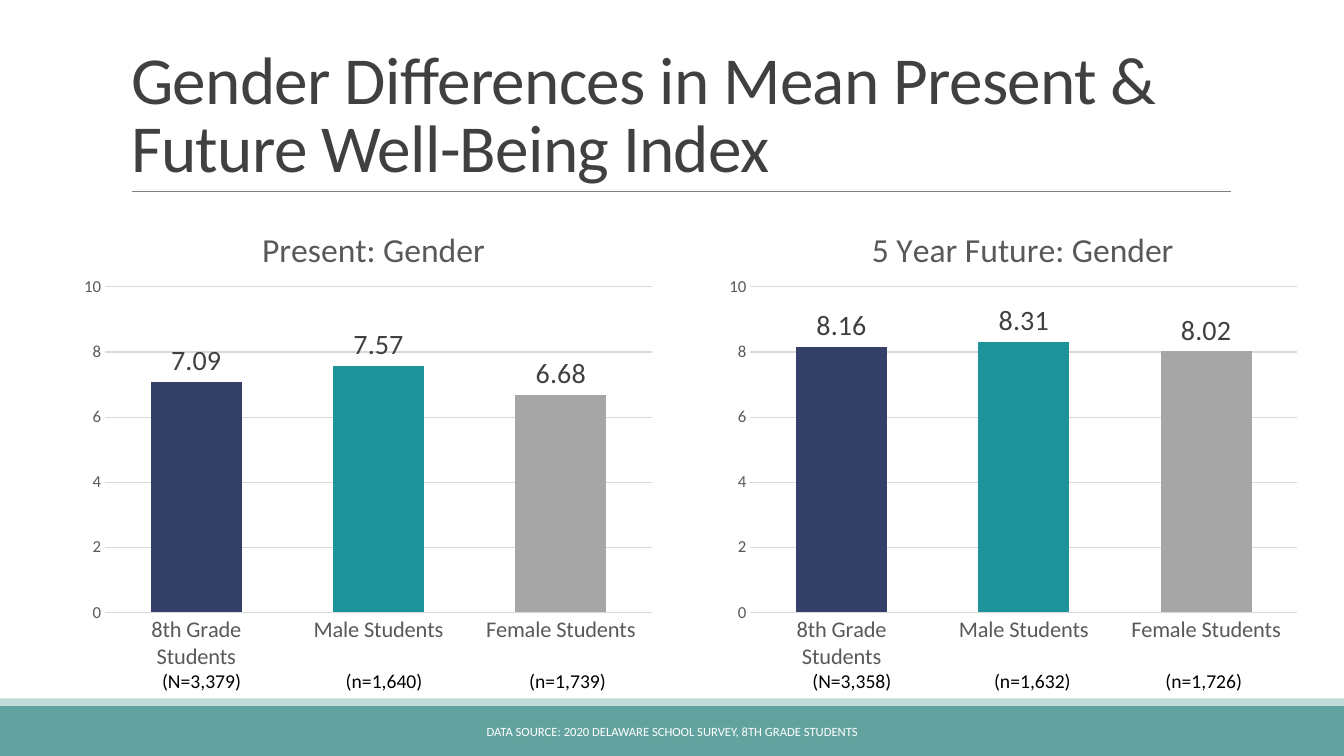
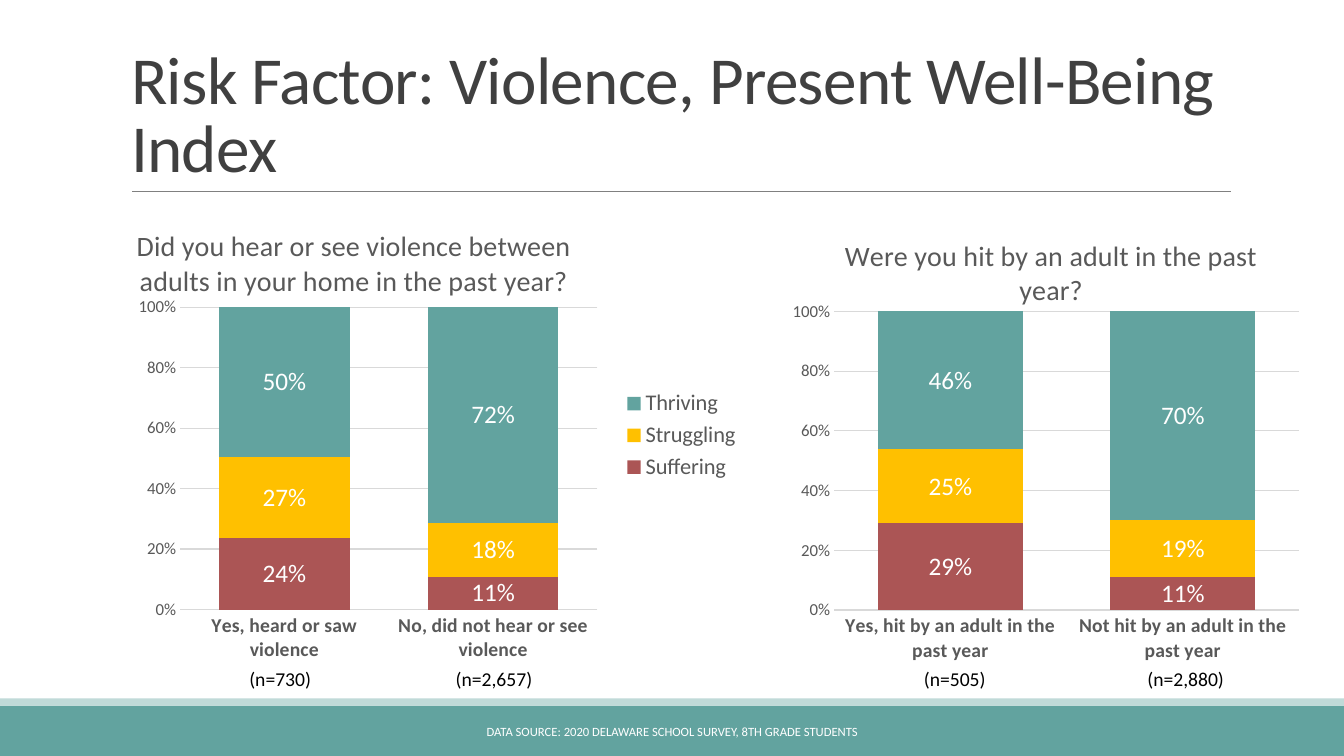
from dataclasses import dataclass
from lxml.etree import SubElement
from pptx import Presentation
from pptx.chart.data import CategoryChartData
from pptx.dml.color import RGBColor
from pptx.enum.chart import XL_CHART_TYPE, XL_LABEL_POSITION, XL_LEGEND_POSITION, XL_TICK_MARK
from pptx.enum.shapes import MSO_CONNECTOR, MSO_SHAPE
from pptx.enum.text import MSO_ANCHOR, MSO_AUTO_SIZE, PP_ALIGN
from pptx.oxml.ns import qn
from pptx.util import Inches, Pt


@dataclass(frozen=True)
class Theme:
    font: str = "Calibri"
    teal: str = "62A39F"
    pale_teal: str = "C0DAD8"
    navy: str = "344068"
    sea: str = "1E9399"
    silver: str = "A6A6A6"
    red: str = "AB5555"
    amber: str = "FFC000"
    heading: str = "404040"
    axis_text: str = "595959"
    rule: str = "808080"
    grid: str = "D9D9D9"
    white: str = "FFFFFF"
    black: str = "000000"
    title_size: int = 48
    count_size: int = 14
    tick_size: int = 12
    source_size: int = 9


THEME = Theme()
SOURCE = "DATA SOURCE: 2020 DELAWARE SCHOOL SURVEY, 8TH GRADE STUDENTS"
GROUPS = ["8th Grade Students", "Male Students", "Female Students"]
LEVELS = {"Suffering": THEME.red, "Struggling": THEME.amber, "Thriving": THEME.teal}


def rgb(colour):
    return RGBColor.from_string(colour)


def style_font(font, size, colour, bold=False):
    font.name, font.size, font.bold = THEME.font, Pt(size), bold
    font.color.rgb = rgb(colour)


def write_text(frame, text, *, size, colour, align=PP_ALIGN.CENTER,
               anchor=MSO_ANCHOR.TOP, line_spacing=None, tracking=None):
    frame.word_wrap = True
    frame.auto_size = MSO_AUTO_SIZE.NONE
    frame.vertical_anchor = anchor
    paragraph = frame.paragraphs[0]
    paragraph.alignment = align
    if line_spacing:
        paragraph.line_spacing = line_spacing
    run = paragraph.add_run()
    run.text = text
    style_font(run.font, size, colour)
    if tracking:
        run.font._element.set("spc", str(int(tracking * 100)))


def add_text(slide, box, text, **text_format):
    textbox = slide.shapes.add_textbox(*map(Inches, box))
    write_text(textbox.text_frame, text, **text_format)


def add_band(slide, box, colour):
    band = slide.shapes.add_shape(MSO_SHAPE.RECTANGLE, *map(Inches, box))
    band.shadow.inherit = False
    band.fill.solid()
    band.fill.fore_color.rgb = rgb(colour)
    band.line.fill.background()


def add_frame(deck, title):
    """Start a slide with its bands, title, rule and source line."""
    slide = deck.slides.add_slide(deck.slide_layouts[5])
    add_band(slide, (0, 7, 13.33, 0.5), THEME.teal)
    add_band(slide, (0, 6.93, 13.33, 0.07), THEME.pale_teal)

    # Rule under the title
    rule = slide.shapes.add_connector(
        MSO_CONNECTOR.STRAIGHT, Inches(1.31), Inches(1.9), Inches(12.21), Inches(1.9))
    rule.line.color.rgb = rgb(THEME.rule)
    rule.line.width = Pt(0.5)
    SubElement(rule._element.spPr, qn("a:effectLst"))

    # Title
    heading = slide.shapes.title
    heading.left, heading.top, heading.width, heading.height = map(
        Inches, (1.2, 0.31, 11, 1.59))
    write_text(heading.text_frame, title, size=THEME.title_size, colour=THEME.heading,
               align=PP_ALIGN.LEFT, anchor=MSO_ANCHOR.BOTTOM, line_spacing=0.85,
               tracking=-0.5)

    # Source line
    add_text(slide, (4.03, 7.06, 5.27, 0.4), SOURCE, size=THEME.source_size,
             colour=THEME.white, anchor=MSO_ANCHOR.MIDDLE)
    return slide


def set_layout(parent, inner=False, **fractions):
    """Fix a chart part at x, y (and w, h) as fractions of the chart."""
    layout = parent.find(qn("c:layout"))
    if layout is None:
        layout = parent.makeelement(qn("c:layout"))
        parent.insert(len(parent.findall(qn("c:tx"))), layout)
    manual = SubElement(layout, qn("c:manualLayout"))
    settings = {"layoutTarget": "inner"} if inner else {}
    settings |= {"xMode": "edge", "yMode": "edge"} | fractions
    for tag, value in settings.items():
        SubElement(manual, qn(f"c:{tag}")).set("val", str(value))


def add_column_chart(slide, kind, box, title, categories, series, *, title_size, title_at,
                     plot_at, gap, overlap, major, category_size, category_bold=False,
                     number_format="General"):
    """Add a column chart in the shared style and return it."""
    chart_data = CategoryChartData(number_format=number_format)
    chart_data.categories = categories
    for name, values in series.items():
        chart_data.add_series(name, values)
    chart = slide.shapes.add_chart(kind, *map(Inches, box), chart_data).chart
    style_font(chart.font, 10, THEME.black)
    chart.has_legend = False

    # Chart title
    chart.has_title = True
    caption = chart.chart_title.text_frame.paragraphs[0].add_run()
    caption.text = title
    style_font(caption.font, title_size, THEME.axis_text)
    set_layout(chart.chart_title._element, x=title_at[0], y=title_at[1])
    chart.chart_title.include_in_layout = False

    # Plot
    set_layout(chart._chartSpace.chart.plotArea, inner=True, **dict(zip("xywh", plot_at)))
    plot = chart.plots[0]
    plot.gap_width, plot.overlap, plot.vary_by_categories = gap, overlap, False

    # Axes
    category_axis, value_axis = chart.category_axis, chart.value_axis
    for axis in (category_axis, value_axis):
        axis.major_tick_mark = axis.minor_tick_mark = XL_TICK_MARK.NONE
    style_font(category_axis.tick_labels.font, category_size, THEME.axis_text, category_bold)
    style_font(value_axis.tick_labels.font, THEME.tick_size, THEME.axis_text)
    value_axis.major_unit = major
    value_axis.has_major_gridlines = True
    value_axis.format.line.fill.background()
    value_axis.tick_labels.number_format = number_format
    value_axis.tick_labels.number_format_is_linked = False
    for line in (category_axis.format.line, value_axis.major_gridlines.format.line):
        line.color.rgb = rgb(THEME.grid)
        line.width = Pt(0.75)
    return chart


def fill_with(part, colour):
    part.format.fill.solid()
    part.format.fill.fore_color.rgb = rgb(colour)


def label_values(series, size, colour, position, number_format):
    labels = series.data_labels
    labels.show_value = True
    labels.position = position
    labels.number_format = number_format
    labels.number_format_is_linked = False
    style_font(labels.font, size, colour)


def add_counts(slide, chart_box, counts):
    """Write sample sizes, each at an offset from the chart's left edge."""
    left, top, _, height = chart_box
    for text, offset in counts.items():
        add_text(slide, (left + offset, top + height - 0.17, 1.04, 0.34), text,
                 size=THEME.count_size, colour=THEME.black)


def add_mean_panel(slide, box, title, title_at, means, counts):
    chart = add_column_chart(
        slide, XL_CHART_TYPE.COLUMN_CLUSTERED, box, title, GROUPS, {"Series 1": means},
        title_size=24, title_at=title_at, plot_at=(0.055, 0.178, 0.924, 0.678),
        gap=100, overlap=-27, major=2, category_size=16)
    chart.value_axis.minimum_scale, chart.value_axis.maximum_scale = 0, 10
    bars = chart.plots[0].series[0]
    for index, colour in enumerate((THEME.navy, THEME.sea, THEME.silver)):
        fill_with(bars.points[index], colour)
    label_values(bars, 20, THEME.heading, XL_LABEL_POSITION.OUTSIDE_END, "0.00")
    add_counts(slide, box, counts)


def add_share_panel(slide, box, question, title_at, plot_at, answers, shares, counts,
                    legend=False):
    chart = add_column_chart(
        slide, XL_CHART_TYPE.COLUMN_STACKED_100, box, question, answers,
        dict(zip(LEVELS, shares)), title_size=20, title_at=title_at, plot_at=plot_at,
        gap=60, overlap=100, major=0.2, category_size=14, category_bold=True,
        number_format="0%")
    for level in chart.plots[0].series:
        fill_with(level, LEVELS[level.name])
        label_values(level, 18, THEME.white, XL_LABEL_POSITION.CENTER, "0%")
    if legend:
        chart.has_legend = True
        chart.legend.position = XL_LEGEND_POSITION.RIGHT
        chart.legend.include_in_layout = False
        style_font(chart.legend.font, 16, THEME.axis_text)
    add_counts(slide, box, counts)


def build_gender_slide(deck):
    slide = add_frame(deck, "Gender Differences in Mean Present & Future Well-Being Index")
    add_mean_panel(slide, (0.72, 2, 5.87, 4.76), "Present: Gender", (0.31, 0.04),
                   (7.09, 7.57, 6.68),
                   {"(N=3,379)": 0.76, "(n=1,640)": 2.57, "(n=1,739)": 4.39})
    add_mean_panel(slide, (7.12, 2, 5.87, 4.76), "5 Year Future: Gender", (0.25, 0.04),
                   (8.16, 8.31, 8.02),
                   {"(N=3,358)": 0.81, "(n=1,632)": 2.6, "(n=1,726)": 4.3})


def build_violence_slide(deck):
    slide = add_frame(deck, "Risk Factor: Violence, Present Well-Being Index")
    add_share_panel(
        slide, (1.05, 1.9, 6.4, 4.84),
        "Did you hear or see violence between adults in your home in the past year?",
        (0.04, 0.06), (0.115, 0.237, 0.647, 0.62),
        ["Yes, heard or saw violence", "No, did not hear or see violence"],
        [(0.24, 0.11), (0.27, 0.18), (0.5, 0.72)],
        {"(n=730)": 1.21, "(n=2,657)": 3.33}, legend=True)
    add_share_panel(
        slide, (7.49, 1.9, 5.59, 4.84), "Were you hit by an adult in the past year?",
        (0.15, 0.08), (0.14, 0.246, 0.825, 0.612),
        ["Yes, hit by an adult in the past year", "Not hit by an adult in the past year"],
        [(0.29, 0.11), (0.25, 0.19), (0.46, 0.7)],
        {"(n=505)": 1.46, "(n=2,880)": 3.75})


def main():
    deck = Presentation()
    deck.slide_width, deck.slide_height = Inches(13.33), Inches(7.5)
    build_gender_slide(deck)
    build_violence_slide(deck)
    deck.save("out.pptx")


if __name__ == "__main__":
    main()
